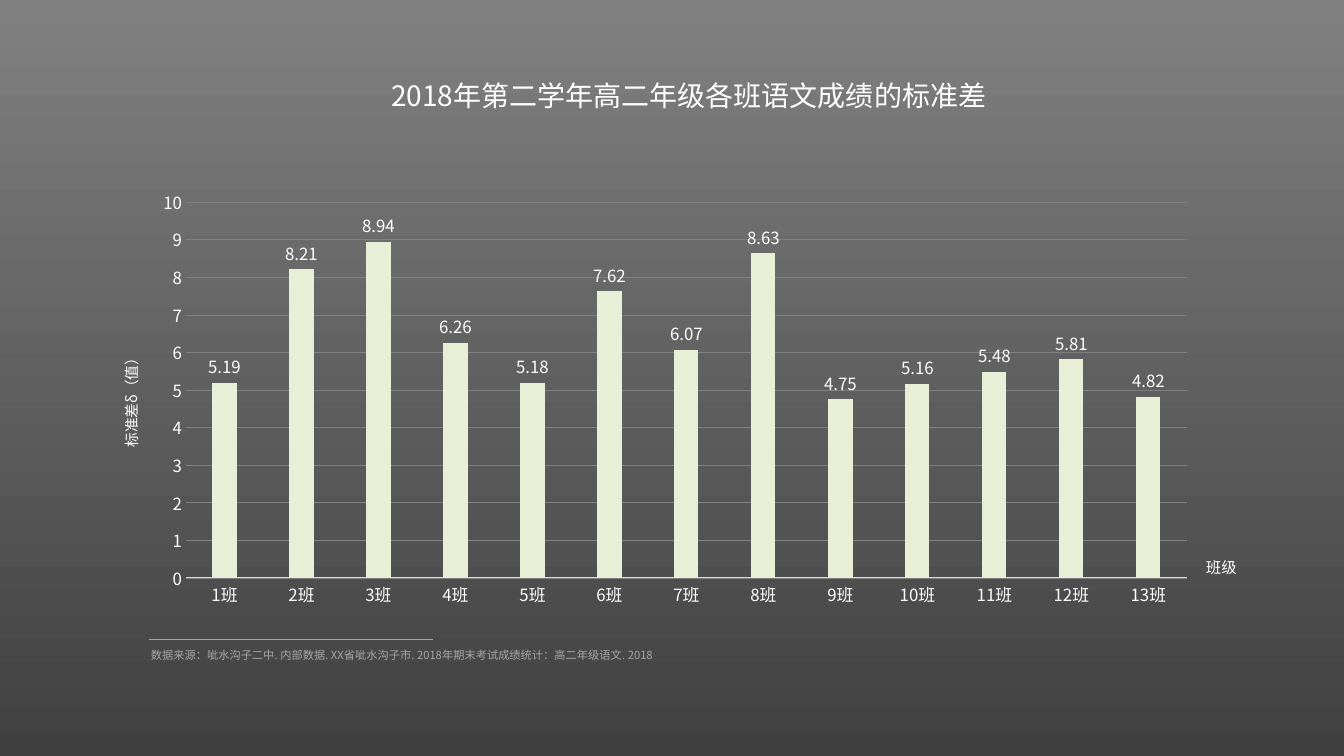
from lxml.etree import SubElement
from pptx import Presentation
from pptx.chart.data import CategoryChartData
from pptx.dml.color import RGBColor
from pptx.enum.chart import XL_CHART_TYPE, XL_LABEL_POSITION, XL_TICK_MARK
from pptx.enum.shapes import MSO_CONNECTOR
from pptx.enum.text import MSO_ANCHOR, MSO_AUTO_SIZE, PP_ALIGN
from pptx.oxml import parse_xml
from pptx.oxml.ns import nsdecls, qn
from pptx.util import Pt

SCALE = 914400 / 100.8
FONT = "Noto Sans CJK SC"
HUES = {"top": "808080", "base": "404040", "text": "FFFFFF", "bar": "E9EED6",
        "grid": "808080", "axis": "D9D9D9", "note": "A6A6A6", "rule": "A5A5A5"}
SCORES = [5.19, 8.21, 8.94, 6.26, 5.18, 7.62, 6.07, 8.63, 4.75, 5.16, 5.48, 5.81, 4.82]


def px(*nums):
    return [round(n * SCALE) for n in nums]


def hue(name):
    return RGBColor.from_string(HUES[name])


class Deck:
    """Holds the style and the current slide, and draws each kind of element."""

    def __init__(self, wide, high):
        self.prs = Presentation()
        self.prs.slide_width, self.prs.slide_height = px(wide, high)
        self.slide = self.prs.slides.add_slide(self.prs.slide_layouts[5])

    def back(self):
        fill = self.slide.background.fill
        fill.gradient()
        fill.gradient_angle = 270
        for stop, name, pos in zip(fill.gradient_stops, ("top", "base"), (0, 1)):
            stop.color.rgb = hue(name)
            stop.position = pos

    def style(self, font, size, name="text"):
        font.name, font.size, font.bold = FONT, Pt(size), False
        font.color.rgb = hue(name)

    def asian(self, root):
        for latin in list(root.iter(qn("a:latin"))):
            latin.addnext(parse_xml(f'<a:ea {nsdecls("a")} typeface="{FONT}"/>'))

    def words(self, shape, text, size, name="text", wrap=True):
        frame = shape.text_frame
        frame.text = text
        frame.word_wrap = wrap
        frame.auto_size = MSO_AUTO_SIZE.NONE
        frame.vertical_anchor = MSO_ANCHOR.TOP
        para = frame.paragraphs[0]
        para.alignment = PP_ALIGN.LEFT
        self.style(para.runs[0].font, size, name)
        self.asian(para.runs[0].font._element)

    def title(self, box, text, size):
        shape = self.slide.shapes.title
        shape.left, shape.top, shape.width, shape.height = px(*box)
        self.words(shape, text, size)

    def label(self, box, text, size, name="text", wrap=True):
        self.words(self.slide.shapes.add_textbox(*px(*box)), text, size, name, wrap)

    def rule(self, start, end, name, width):
        line = self.slide.shapes.add_connector(MSO_CONNECTOR.STRAIGHT, *px(*start, *end))
        line.line.color.rgb = hue(name)
        line.line.width = Pt(width)
        SubElement(line._element.spPr, qn("a:effectLst"))

    def layout(self, parent, spot, tags):
        old = parent.find(qn("c:layout"))
        if old is not None:
            parent.remove(old)
        body = "".join(f'<c:{tag} val="{val}"/>' for tag, val in tags)
        parent.insert(spot, parse_xml(
            f'<c:layout {nsdecls("c")}><c:manualLayout>{body}</c:manualLayout></c:layout>'))

    def chart(self, box, plot, mark, caption, cats, vals):
        data = CategoryChartData()
        data.categories = cats
        data.add_series("Series 1", vals)
        chart = self.slide.shapes.add_chart(
            XL_CHART_TYPE.COLUMN_CLUSTERED, *px(*box), data).chart
        chart.has_legend = chart.has_title = False
        self.style(chart.font, 12)

        bars = chart.plots[0]
        bars.gap_width, bars.overlap, bars.vary_by_categories = 219, -27, False
        fill = bars.series[0].format.fill
        fill.solid()
        fill.fore_color.rgb = hue("bar")
        bars.has_data_labels = True
        tags = bars.data_labels
        tags.show_value = True
        tags.position = XL_LABEL_POSITION.OUTSIDE_END
        self.style(tags.font, 12)

        cat, val = chart.category_axis, chart.value_axis
        for axis in (cat, val):
            axis.major_tick_mark = axis.minor_tick_mark = XL_TICK_MARK.NONE
            self.style(axis.tick_labels.font, 12)
        cat.format.line.color.rgb = hue("axis")
        cat.format.line.width = Pt(0.75)
        val.minimum_scale, val.maximum_scale, val.major_unit = 0, 10, 1
        val.format.line.fill.background()
        grid = val.major_gridlines.format.line
        grid.color.rgb = hue("grid")
        grid.width = Pt(0.25)

        frame = val.axis_title.text_frame
        frame.text = caption
        self.style(frame.paragraphs[0].runs[0].font, 10.5)
        turn = frame._txBody.find(qn("a:bodyPr"))
        turn.set("rot", "-5400000")
        turn.set("vert", "horz")

        left, top, wide, high = box
        x, y, w, h = plot
        self.layout(chart._chartSpace.chart.plotArea, 0, [
            ("layoutTarget", "inner"), ("xMode", "edge"), ("yMode", "edge"),
            ("x", (x - left) / wide), ("y", (y - top) / high),
            ("w", w / wide), ("h", h / high)])
        self.layout(val.axis_title._element, 1, [
            ("xMode", "edge"), ("yMode", "edge"),
            ("x", (mark[0] - left) / wide), ("y", (mark[1] - top) / high)])
        self.asian(chart._chartSpace)


def main():
    deck = Deck(1344, 756)
    deck.back()
    deck.chart((92, 180, 1118, 435), (186, 202, 1001, 376), (116, 348), "标准差δ（值）",
               [f"{num}班" for num in range(1, len(SCORES) + 1)], SCORES)
    deck.label((1196, 553, 51, 29), "班级", 11, wrap=False)
    deck.title((381, 73, 618, 44), "2018年第二学年高二年级各班语文成绩的标准差", 20)
    deck.label((141, 643, 814, 24),
               "数据来源：呲水沟子二中. 内部数据. XX省呲水沟子市. 2018年期末考试成绩统计：高二年级语文. 2018",
               8, "note")
    deck.rule((149, 639), (433, 639), "rule", 0.5)
    deck.prs.save("out.pptx")


if __name__ == "__main__":
    main()
